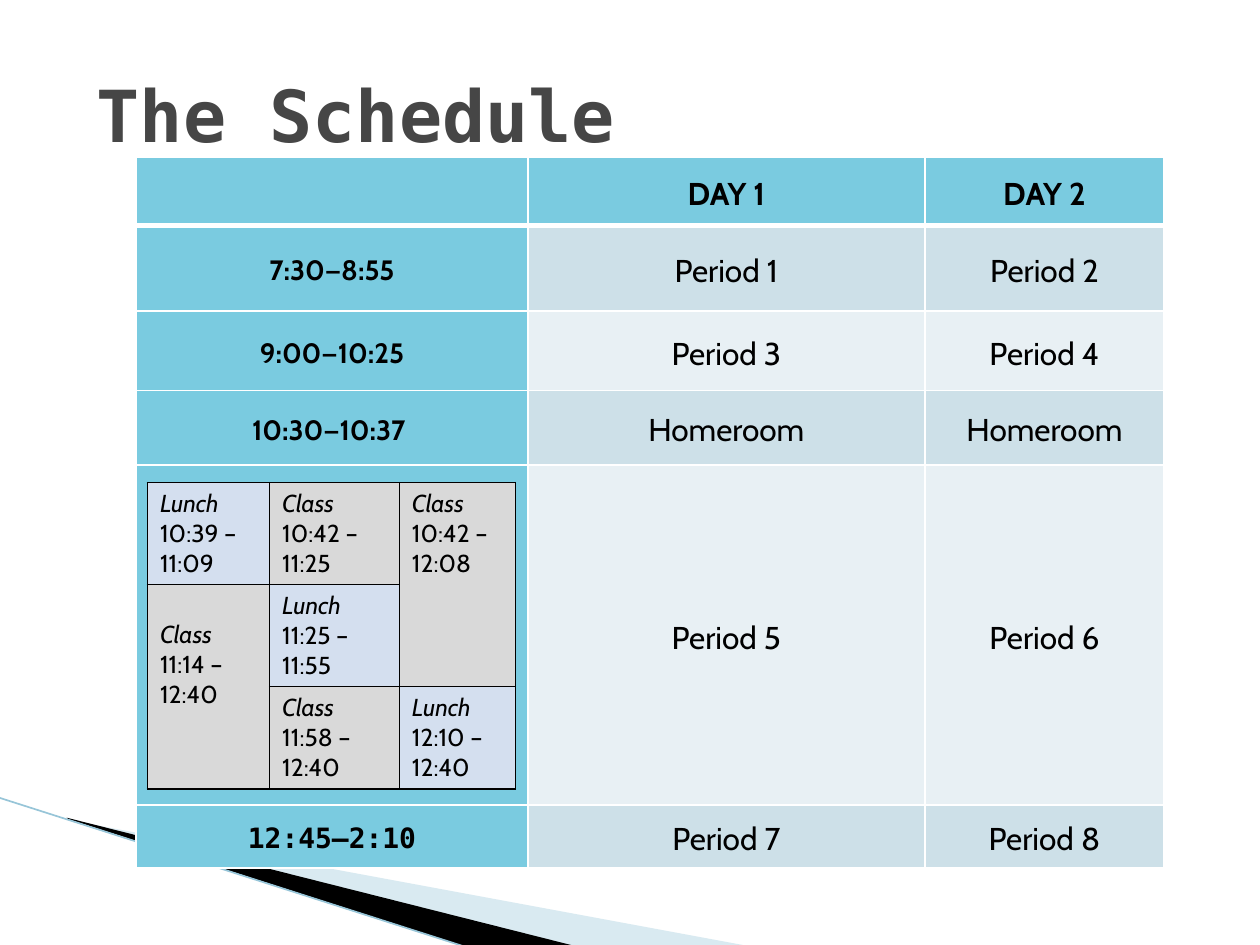
from typing import NamedTuple

from lxml.etree import SubElement
from pptx import Presentation
from pptx.dml.color import RGBColor
from pptx.enum.shapes import MSO_CONNECTOR as Conn
from pptx.enum.text import MSO_ANCHOR as Anchor, PP_ALIGN as Align
from pptx.oxml.ns import qn
from pptx.util import Inches, Pt

WHITE = RGBColor(0xFF, 0xFF, 0xFF)
BLACK = RGBColor(0, 0, 0)
TEAL = RGBColor(0x7A, 0xCB, 0xE0)
MIST = RGBColor(0xCD, 0xE0, 0xE8)
PALE = RGBColor(0xE8, 0xF0, 0xF4)
BLUE = RGBColor(0xD4, 0xDF, 0xEF)
GRAY = RGBColor(0xD9, 0xD9, 0xD9)
DARK = RGBColor(0x46, 0x46, 0x46)
WAVE = RGBColor(0xA0, 0xCB, 0xDC)
EDGE = RGBColor(0x97, 0xC5, 0xD8)
SANS = "Cabin"
MONO = "DejaVu Sans Mono"


class Swoosh(NamedTuple):
    pts: list[tuple[float, float]]
    color: RGBColor
    alpha: int


class Slot(NamedTuple):
    row: int
    col: int
    kind: str
    time: str
    span: int = 1
    top: float = 0.05


SWOOSHES = [
    Swoosh([(0.55, 6.51), (5.95, 7.51), (4.56, 7.51), (0.55, 6.5)], WAVE, 40),
    Swoosh([(0.53, 6.49), (4.57, 7.51), (3.72, 7.52), (0.54, 6.5)], BLACK, 100),
]
DAYS = [
    ("", "DAY 1", "DAY 2"),
    ("7:30—8:55", "Period 1", "Period 2"),
    ("9:00—10:25", "Period 3", "Period 4"),
    ("10:30—10:37 ", "Homeroom", "Homeroom"),
    ("", "Period 5", "Period 6"),
    ("12:45—2:10", "Period 7", "Period 8"),
]
SLOTS = [
    Slot(0, 0, "Lunch", "10:39 – 11:09"),
    Slot(0, 1, "Class", "10:42 – 11:25"),
    Slot(0, 2, "Class", "10:42 – 12:08", span=2),
    Slot(1, 0, "Class", "11:14 – 12:40", span=2, top=0.28),
    Slot(1, 1, "Lunch", "11:25 – 11:55"),
    Slot(2, 1, "Class", "11:58 – 12:40"),
    Slot(2, 2, "Lunch", "12:10 – 12:40"),
]


def add_run(para, text: str, size: float, color=BLACK, face=SANS, bold=False, slant=False) -> None:
    run = para.add_run()
    run.text = text
    font = run.font
    font.name, font.size, font.bold, font.italic = face, Pt(size), bold, slant
    font.color.rgb = color


def set_edges(cell, color: RGBColor, top: float = 1, base: float = 1) -> None:
    props = cell._tc.get_or_add_tcPr()
    for side, width in zip("LRTB", (1, 1, top, base)):
        line = SubElement(props, qn(f"a:ln{side}"), w=str(Pt(width)))
        fill = SubElement(line, qn("a:solidFill"))
        SubElement(fill, qn("a:srgbClr"), val=str(color))


def set_fill(cell, color: RGBColor) -> None:
    cell.fill.solid()
    cell.fill.fore_color.rgb = color


def add_grid(slide, left: float, top: float, cols: list[float], rows: list[float]):
    frame = slide.shapes.add_table(
        len(rows), len(cols), Inches(left), Inches(top), Inches(sum(cols)), Inches(sum(rows)))
    grid = frame.table
    grid.first_row = grid.horz_banding = False
    for col, width in zip(grid.columns, cols):
        col.width = Inches(width)
    for row, height in zip(grid.rows, rows):
        row.height = Inches(height)
    return grid


def add_swoosh(slide, item: Swoosh) -> None:
    pts = [(Inches(x), Inches(y)) for x, y in item.pts]
    pen = slide.shapes.build_freeform(*pts[0])
    pen.add_line_segments(pts[1:], close=True)
    shape = pen.convert_to_shape()
    shape.shadow.inherit = False
    shape.line.fill.background()
    shape.fill.solid()
    shape.fill.fore_color.rgb = item.color
    if item.alpha < 100:
        tint = shape.fill._xPr.find(f".//{qn('a:srgbClr')}")
        SubElement(tint, qn("a:alpha"), val=str(item.alpha * 1000))


def add_edge(slide) -> None:
    line = slide.shapes.add_connector(
        Conn.STRAIGHT, Inches(-0.01), Inches(6.33), Inches(3.71), Inches(7.52))
    line.line.color.rgb = EDGE
    line.line.width = Pt(0.95)
    SubElement(line._element.spPr, qn("a:effectLst"))


def add_days(slide) -> None:
    grid = add_grid(slide, 1.08, 1.25, [3.11, 3.15, 1.9], [0.54, 0.68, 0.63, 0.59, 2.7, 0.5])
    for r, texts in enumerate(DAYS):
        for c, text in enumerate(texts):
            cell = grid.cell(r, c)
            head = r == 0 or c == 0
            set_edges(cell, WHITE, top=3 if r == 1 else 1, base=3 if r == 0 else 1)
            set_fill(cell, TEAL if head else MIST if r % 2 else PALE)
            if not text:
                continue
            cell.vertical_anchor = Anchor.MIDDLE
            cell.margin_left = cell.margin_right = Inches(0.07)
            cell.margin_top = cell.margin_bottom = 0
            para = cell.text_frame.paragraphs[0]
            para.alignment = Align.CENTER
            para.line_spacing = 1.15
            face = MONO if c == 0 and r == len(DAYS) - 1 else SANS
            add_run(para, text, 18 if c else 16, face=face, bold=head)


def add_lunch(slide) -> None:
    grid = add_grid(slide, 1.17, 3.83, [0.97, 1.03, 0.92], [0.81] * 3)
    for cell in grid.iter_cells():
        set_edges(cell, BLACK)
    for slot in SLOTS:
        cell = grid.cell(slot.row, slot.col)
        if slot.span > 1:
            cell.merge(grid.cell(slot.row + slot.span - 1, slot.col))
        set_fill(cell, BLUE if slot.kind == "Lunch" else GRAY)
        cell.margin_top = Inches(slot.top)
        frame = cell.text_frame
        add_run(frame.paragraphs[0], slot.kind, 14, slant=True)
        add_run(frame.add_paragraph(), slot.time, 14)
        for para in frame.paragraphs:
            para.alignment = Align.LEFT


def add_title(slide) -> None:
    box = slide.shapes.add_textbox(Inches(0.67), Inches(0.47), Inches(9), Inches(1.25))
    frame = box.text_frame
    frame.word_wrap = True
    frame.margin_top = Inches(0.09)
    add_run(frame.paragraphs[0], "The Schedule", 41, DARK, MONO, bold=True)


def main() -> None:
    """Build the school day schedule slide."""
    deck = Presentation()
    deck.slide_width, deck.slide_height = Inches(10), Inches(7.5)
    slide = deck.slides.add_slide(deck.slide_layouts[6])
    for item in SWOOSHES:
        add_swoosh(slide, item)
    add_edge(slide)
    add_days(slide)
    add_lunch(slide)
    add_title(slide)
    deck.save("out.pptx")


if __name__ == "__main__":
    main()
